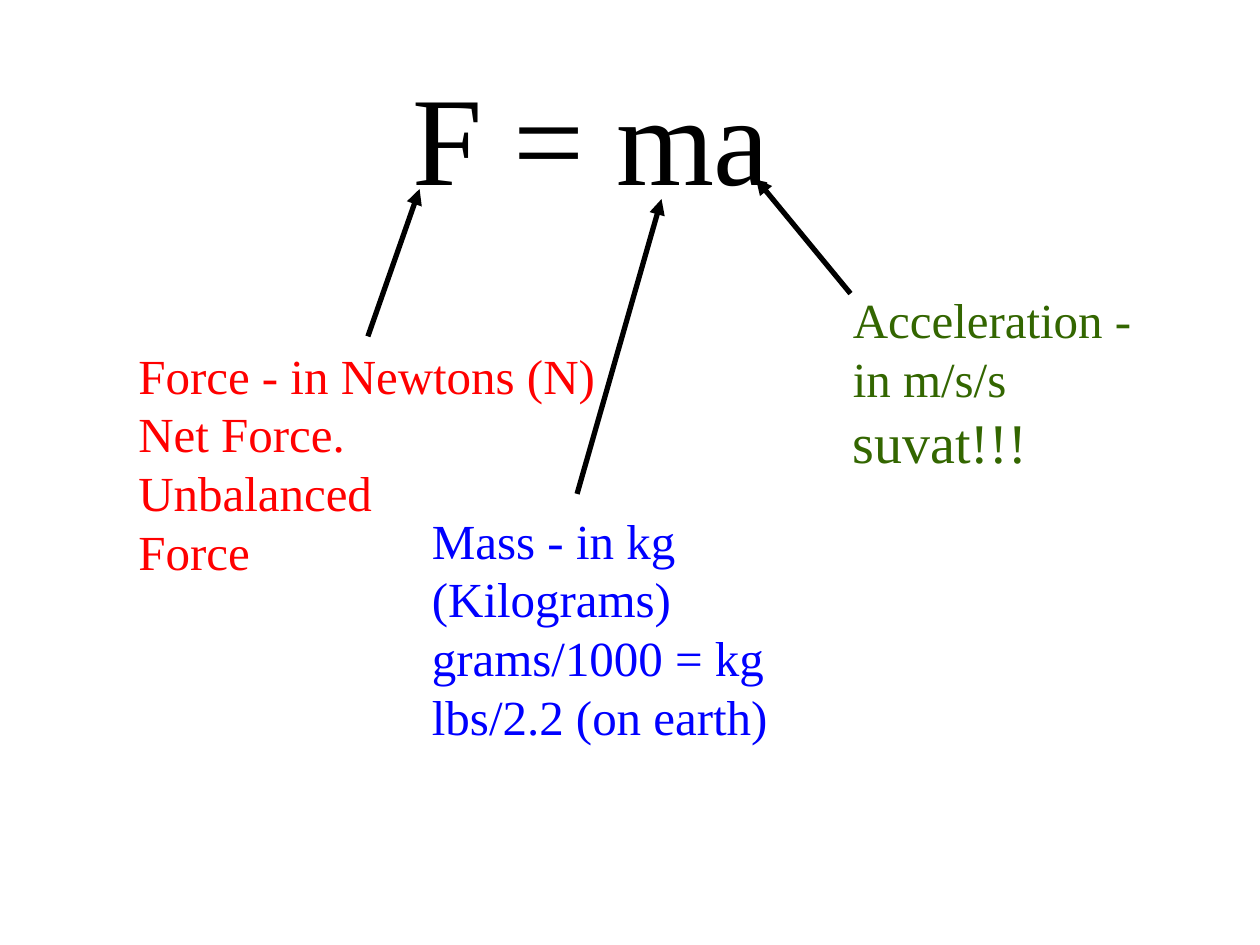
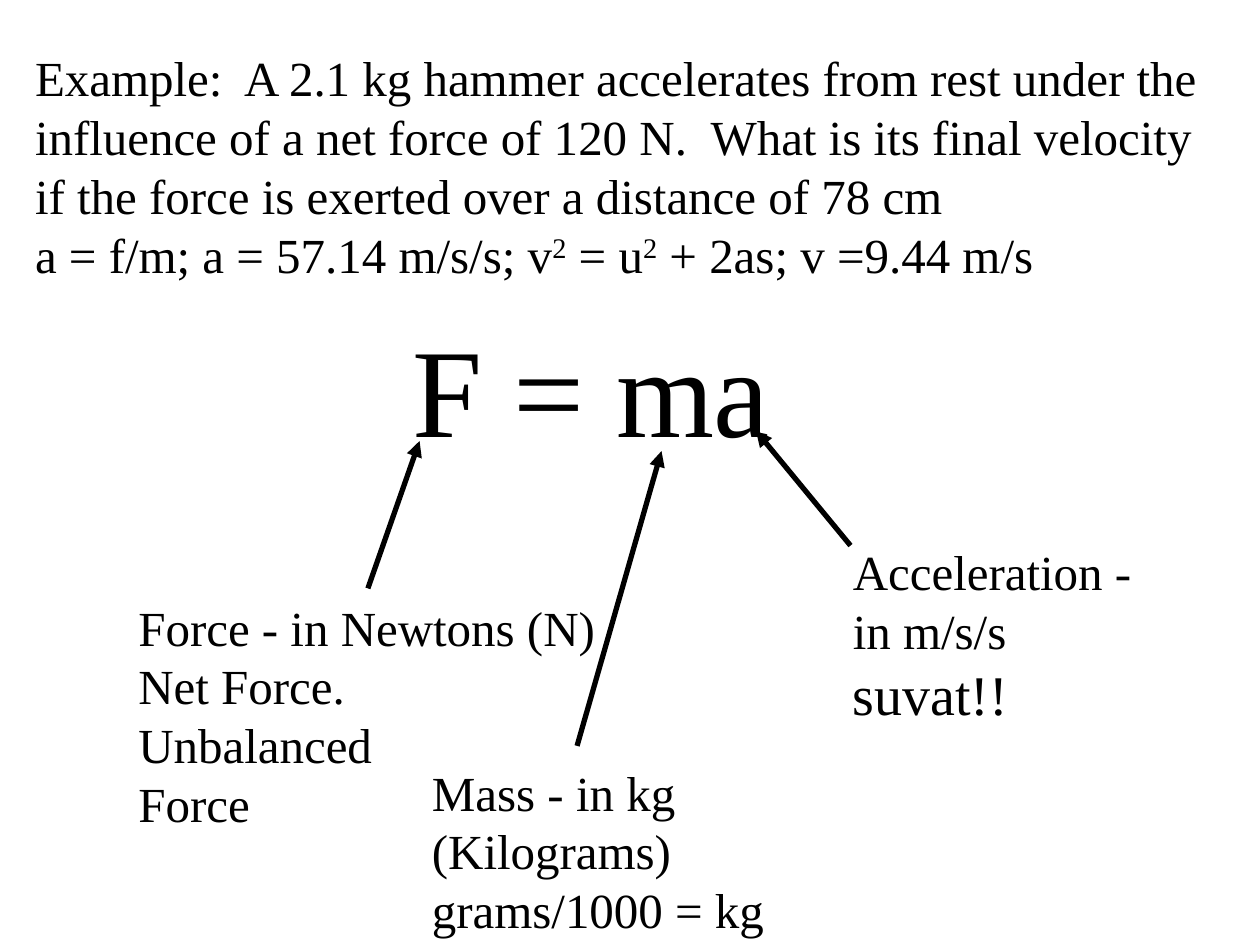
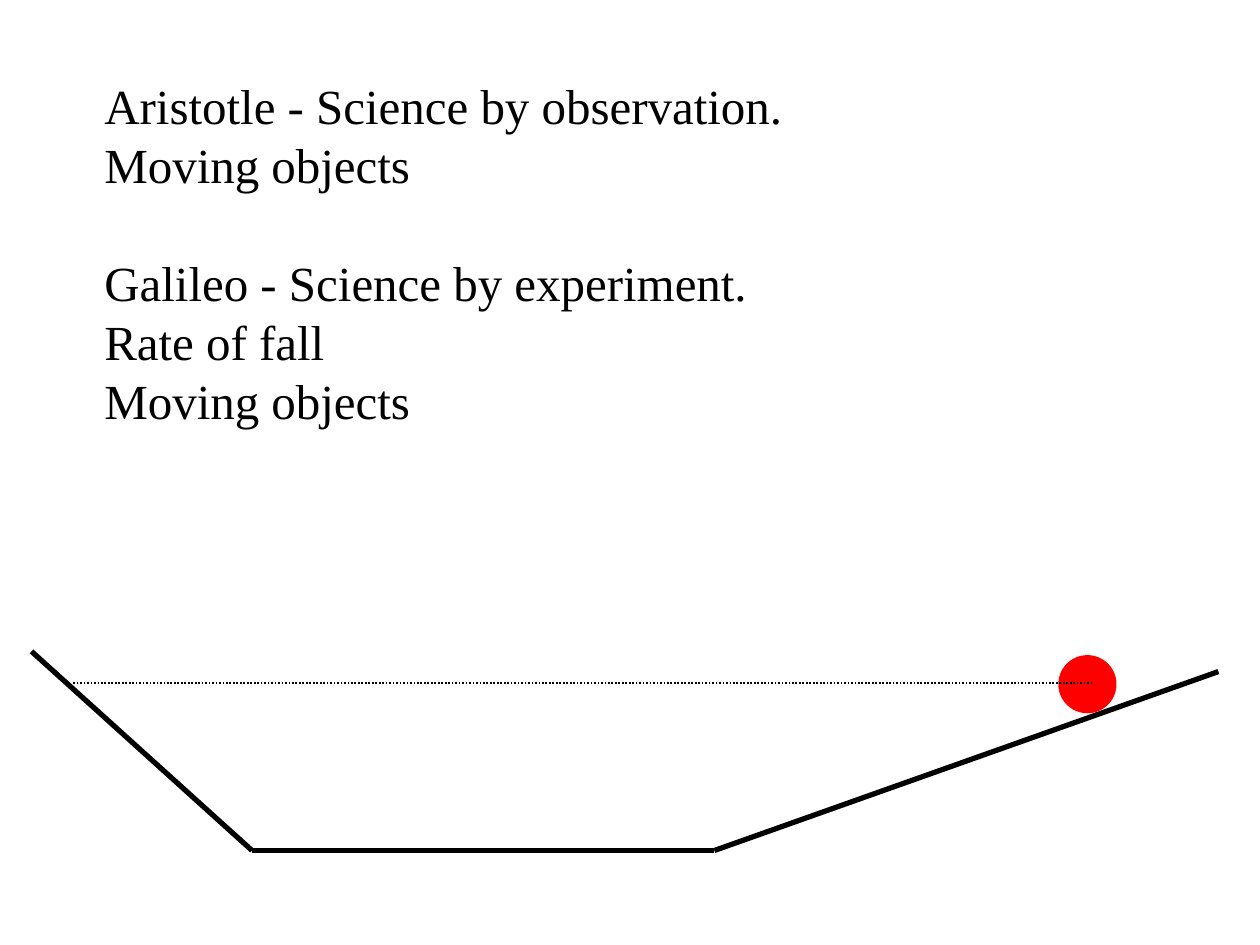
from lxml import etree
from pptx import Presentation
from pptx.dml.color import RGBColor
from pptx.enum.dml import MSO_LINE
from pptx.enum.shapes import MSO_CONNECTOR, MSO_SHAPE
from pptx.enum.text import MSO_ANCHOR, MSO_AUTO_SIZE, PP_ALIGN
from pptx.oxml.ns import qn
from pptx.util import Pt

PX = 9144  # 100 px to the inch
FONT = "Times New Roman"
BLACK, RED, BLUE, GREEN = "000000", "FF0000", "0000FF", "336600"
rgb = RGBColor.from_string


def fill_text(sp, paragraphs, color=BLACK, wrap=True):
    """Each paragraph is (size, space before, runs); odd runs are superscript."""
    tf = sp.text_frame
    tf.word_wrap = wrap
    tf.auto_size = MSO_AUTO_SIZE.SHAPE_TO_FIT_TEXT
    tf.vertical_anchor = MSO_ANCHOR.TOP
    for i, (size, before, runs) in enumerate(paragraphs):
        p = tf.add_paragraph() if i else tf.paragraphs[0]
        p.alignment = PP_ALIGN.LEFT
        p.space_before = Pt(before)
        for j, text in enumerate(runs):
            r = p.add_run()
            r.text = text
            r.font.name, r.font.size = FONT, Pt(size)
            r.font.color.rgb = rgb(color)
            if j % 2:
                r.font._element.set("baseline", "30000")


def add_line(shapes, x1, y1, x2, y2, width=3, arrow=False):
    line = shapes.add_connector(MSO_CONNECTOR.STRAIGHT,
                                x1 * PX, y1 * PX, x2 * PX, y2 * PX)
    line.line.color.rgb = rgb(BLACK)
    line.line.width = Pt(width)
    if arrow:
        etree.SubElement(line.line._get_or_add_ln(), qn("a:tailEnd"), type="triangle")
    etree.SubElement(line._element.spPr, qn("a:effectLst"))
    return line


prs = Presentation()
prs.slide_width, prs.slide_height = 1000 * PX, 750 * PX
title_only, blank = prs.slide_layouts[5], prs.slide_layouts[6]

# Labels of the formula: box, wrap, arrow
labels = [
    ((100, 269, 383, 197), False, (292, 267, 333, 150)),
    ((333, 400, 287, 197), False, (458, 392, 525, 158)),
    ((667, 225, 302, 158), True, (675, 233, 600, 142)),
]
force = ["Force - in Newtons (N)", "Net Force.", "Unbalanced", "Force"]
mass = ["Mass - in kg", "(Kilograms)", "grams/1000 = kg"]
acceleration = ["Acceleration -", "in m/s/s"]

# Slides 1 and 2: the formula with its labels, lower down on the second
formula_slides = [
    (0, [RED, BLUE, GREEN],
     [force, mass + ["lbs/2.2 (on earth)"], acceleration + ["suvat!!!"]]),
    (200, [BLACK] * 3, [force, mass, acceleration + ["suvat!!"]]),
]
for dy, colors, texts in formula_slides:
    s = prs.slides.add_slide(title_only)
    title = s.shapes.title
    title.left, title.top = 317 * PX, (42 + dy) * PX
    title.width, title.height = 343 * PX, 130 * PX
    fill_text(title, [(72, 0, ["F = ma"])])

    for (box, wrap, arrow), color, lines in zip(labels, colors, texts):
        group = s.shapes.add_group_shape()
        x, y, w, h = box
        h -= 47 * (4 - len(lines)) if not wrap else 0
        sp = group.shapes.add_textbox(x * PX, (y + dy) * PX, w * PX, h * PX)
        fill_text(sp, [(32 if "suvat" in line else 28, 0, [line]) for line in lines],
                  color, wrap)
        x1, y1, x2, y2 = arrow
        add_line(group.shapes, x1, y1 + dy, x2, y2 + dy, arrow=True)

# Slide 2: worked example above the formula
sp = s.shapes.add_textbox(18 * PX, 33 * PX, 967 * PX, 199 * PX)
fill_text(sp, [
    (28, 0, ["Example:  A 2.1 kg hammer accelerates from rest under the influence "
             "of a net force of 120 N.  What is its final velocity if the force is "
             "exerted over a distance of 78 cm"]),
    (28, 0, ["a = f/m; a = 57.14 m/s/s; v", "2", " = u", "2", " + 2as; v =9.44 m/s"]),
])

# Slide 3: Aristotle and Galileo
s = prs.slides.add_slide(blank)
sp = s.shapes.add_textbox(73 * PX, 55 * PX, 860 * PX, 290 * PX)
fill_text(sp, [
    (28, 0, ["Aristotle - Science by observation."]),
    (28, 0, ["Moving objects"]),
    (28, 34, ["Galileo - Science by experiment."]),
    (28, 0, ["Rate of fall"]),
    (28, 0, ["Moving objects"]),
])

# Track with its two ramps
track = [(25, 517), (200, 675), (567, 675), (967, 533)]
for start, end in zip(track, track[1:]):
    add_line(s.shapes, *start, *end)

# Ball and the level it rises to
ball = s.shapes.add_shape(MSO_SHAPE.OVAL, 842 * PX, 522 * PX, 42 * PX, 42 * PX)
ball.shadow.inherit = False
ball.fill.solid()
ball.fill.fore_color.rgb = rgb(RED)
ball.line.color.rgb = rgb(RED)
ball.line.width = Pt(3)
level = add_line(s.shapes, 867, 542, 58, 542, width=1)
level.line.dash_style = MSO_LINE.ROUND_DOT

prs.save("out.pptx")
